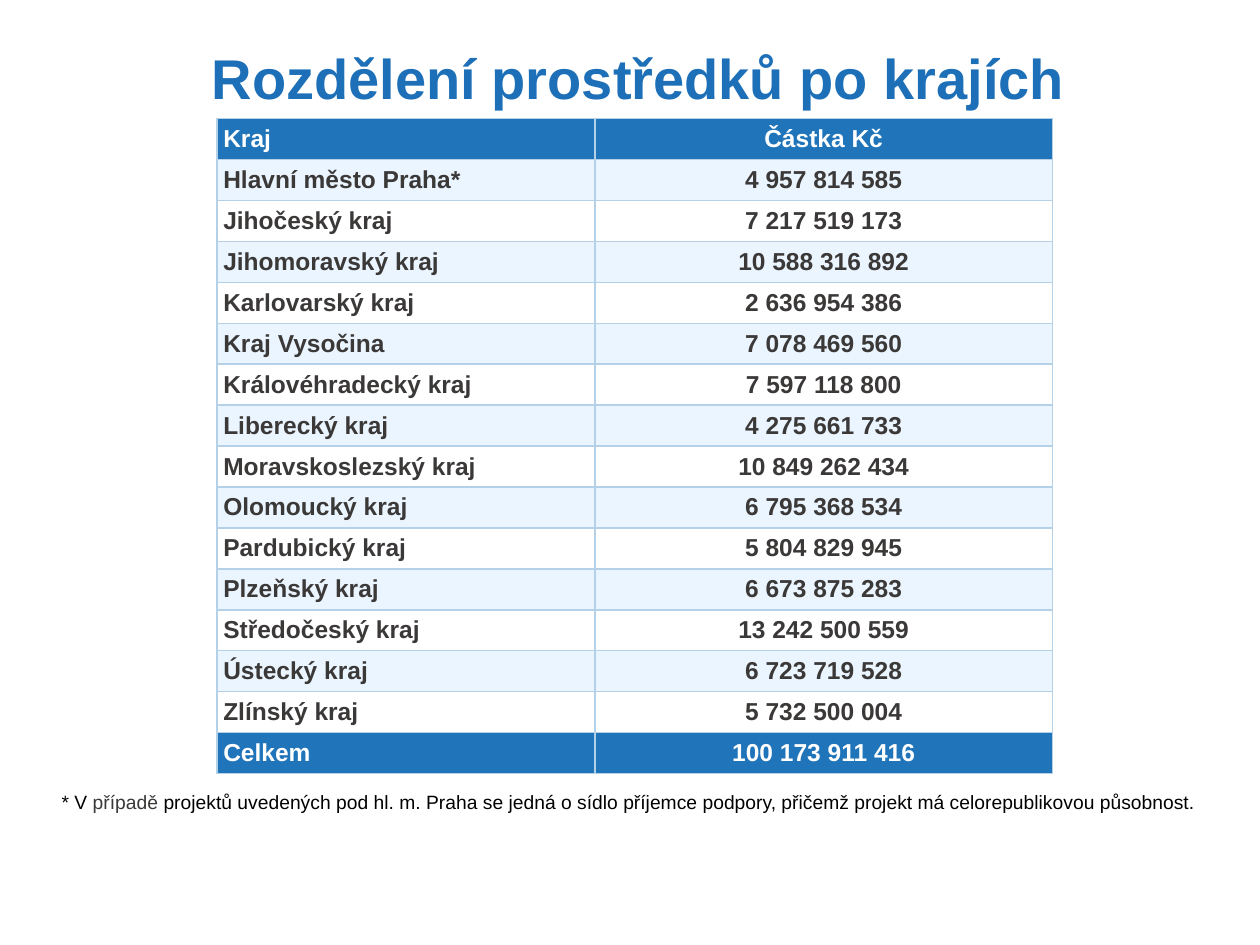
from dataclasses import dataclass

from lxml.etree import SubElement
from pptx import Presentation
from pptx.dml.color import RGBColor
from pptx.enum.text import MSO_ANCHOR, MSO_AUTO_SIZE, PP_ALIGN
from pptx.oxml.ns import qn
from pptx.util import Pt


@dataclass(frozen=True)
class Theme:
    font: str = "Arial"
    title_color: str = "1D70B8"
    accent: str = "2074BA"
    band: str = "EBF5FF"
    white: str = "FFFFFF"
    black: str = "000000"
    dark: str = "3B3838"
    border: str = "B4D1E8"
    title_size: float = 32
    table_size: float = 14
    note_size: float = 11
    border_width: float = 1


REGIONS = [
    ("Hlavní město Praha*", "4 957 814 585"),
    ("Jihočeský kraj", "7 217 519 173"),
    ("Jihomoravský kraj", "10 588 316 892"),
    ("Karlovarský kraj", "2 636 954 386"),
    ("Kraj Vysočina", "7 078 469 560"),
    ("Královéhradecký kraj", "7 597 118 800"),
    ("Liberecký kraj", "4 275 661 733"),
    ("Moravskoslezský kraj", "10 849 262 434"),
    ("Olomoucký kraj", "6 795 368 534"),
    ("Pardubický kraj", "5 804 829 945"),
    ("Plzeňský kraj", "6 673 875 283"),
    ("Středočeský kraj", "13 242 500 559"),
    ("Ústecký kraj", "6 723 719 528"),
    ("Zlínský kraj", "5 732 500 004"),
]
HEADER = ("Kraj", "Částka Kč")
TOTAL = ("Celkem", "100 173 911 416")


class SlideBuilder:
    def __init__(self, slide, theme):
        self.slide = slide
        self.theme = theme

    def span(self, para, text, size, color, bold=False):
        span = para.add_run()
        span.text = text
        span.font.name = self.theme.font
        span.font.size = Pt(size)
        span.font.bold = bold
        span.font.color.rgb = RGBColor.from_string(color)

    def title(self, text, left, top, width, height):
        box = self.slide.shapes.title
        box.left, box.top, box.width, box.height = map(Pt, (left, top, width, height))
        frame = box.text_frame
        frame.auto_size = MSO_AUTO_SIZE.NONE
        frame.vertical_anchor = MSO_ANCHOR.BOTTOM
        para = frame.paragraphs[0]
        para.alignment = PP_ALIGN.CENTER
        para.line_spacing = 0.9
        self.span(para, text, self.theme.title_size, self.theme.title_color, True)

    def note(self, parts, left, top, width, height):
        box = self.slide.shapes.add_textbox(*map(Pt, (left, top, width, height)))
        frame = box.text_frame
        frame.word_wrap = True
        frame.auto_size = MSO_AUTO_SIZE.SHAPE_TO_FIT_TEXT
        for text, color in parts:
            self.span(frame.paragraphs[0], text, self.theme.note_size, color)

    def borders(self, cell):
        properties = cell._tc.get_or_add_tcPr()
        for side in ("a:lnL", "a:lnR", "a:lnT", "a:lnB"):
            line = SubElement(properties, qn(side), w=str(Pt(self.theme.border_width)))
            fill = SubElement(line, qn("a:solidFill"))
            SubElement(fill, qn("a:srgbClr"), val=self.theme.border)

    def cell(self, cell, text, alignment, fill, color):
        self.borders(cell)
        cell.fill.solid()
        cell.fill.fore_color.rgb = RGBColor.from_string(fill)
        cell.vertical_anchor = MSO_ANCHOR.MIDDLE
        cell.margin_left = cell.margin_right = Pt(3.6)
        cell.margin_top = cell.margin_bottom = Pt(0)
        para = cell.text_frame.paragraphs[0]
        para.alignment = alignment
        self.span(para, text, self.theme.table_size, color, True)

    def table(self, rows, left, top, widths, row_height):
        theme = self.theme
        frame = self.slide.shapes.add_table(
            len(rows), len(widths), Pt(left), Pt(top),
            Pt(sum(widths)), Pt(row_height * len(rows)))
        table = frame.table
        for column, width in zip(table.columns, widths):
            column.width = Pt(width)
        for index, values in enumerate(rows):
            table.rows[index].height = Pt(row_height)
            if index in (0, len(rows) - 1):
                fill, color = theme.accent, theme.white
            else:
                fill, color = (theme.band if index % 2 else theme.white), theme.dark
            for column, text in enumerate(values):
                alignment = PP_ALIGN.CENTER if column else PP_ALIGN.LEFT
                self.cell(table.cell(index, column), text, alignment, fill, color)


def main():
    deck = Presentation()
    deck.slide_width, deck.slide_height = Pt(720), Pt(540)
    theme = Theme()
    page = SlideBuilder(deck.slides.add_slide(deck.slide_layouts[5]), theme)
    page.title("Rozdělení prostředků po krajích", 38.9, 15.8, 652.3, 51.8)
    page.note([
        ("* V ", theme.black),
        ("případě", theme.dark),
        (" projektů uvedených pod hl. m. Praha se jedná o sídlo příjemce podpory, "
         "přičemž projekt má celorepublikovou působnost.", theme.black),
    ], 28.1, 447.8, 667.4, 20.9)
    page.table([HEADER, *REGIONS, TOTAL], 124, 67.8, (216, 261.4), 23.4)
    deck.save("out.pptx")


if __name__ == "__main__":
    main()
